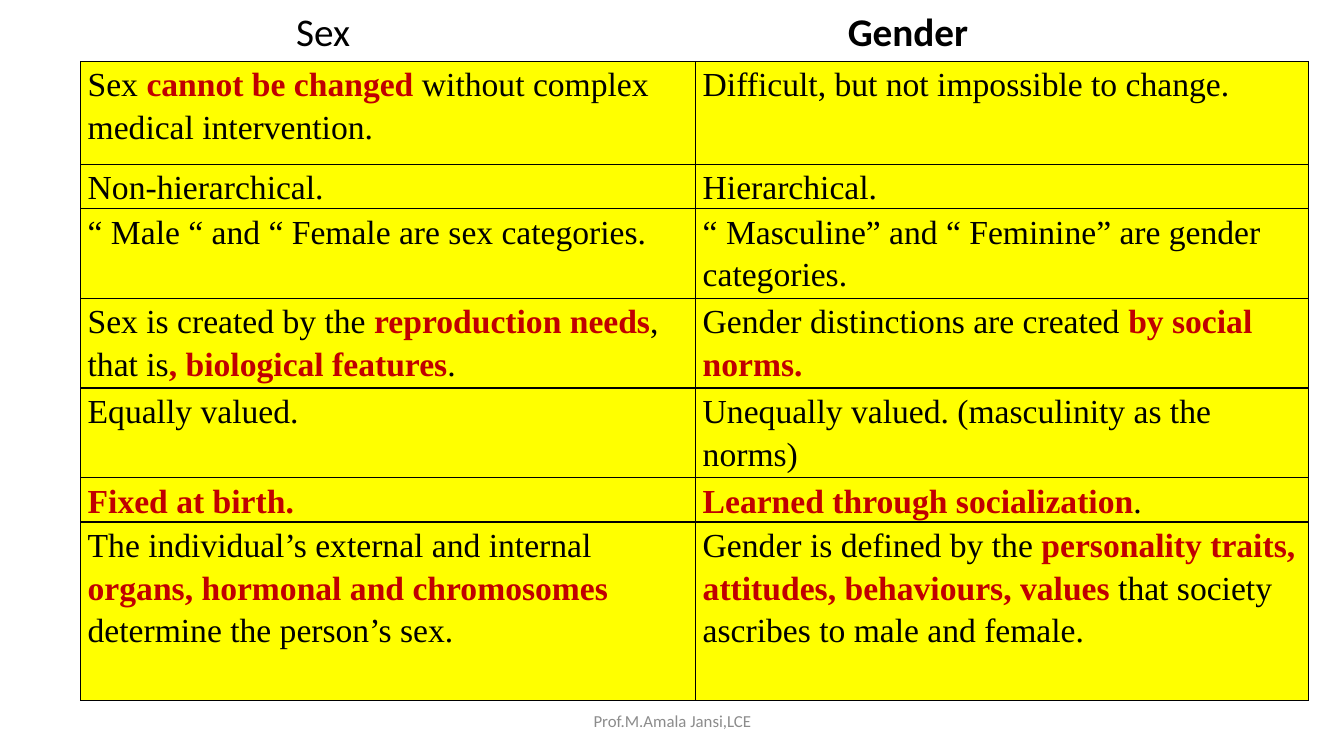
from lxml.etree import SubElement
from pptx import Presentation
from pptx.dml.color import RGBColor
from pptx.enum.text import MSO_ANCHOR, PP_ALIGN
from pptx.oxml.ns import qn
from pptx.util import Inches, Pt

# Words between asterisks are bold red.
ROWS = [
    (1.02, "Sex *cannot be changed *without complex medical intervention.",
     "Difficult, but not impossible to change."),
    (0.44, "Non-hierarchical.", "Hierarchical."),
    (0.89, "“ Male “ and “ Female are sex categories.",
     "“ Masculine” and “ Feminine” are gender categories."),
    (0.89, "Sex is created by the *reproduction needs*, that is*, biological features*.",
     "Gender distinctions are created *by social norms.*"),
    (0.89, "Equally valued.", "Unequally valued. (masculinity as the norms)"),
    (0.44, "*Fixed at birth.*", "*Learned through socialization*."),
    (1.77, "The individual’s external and internal *organs, hormonal and "
     "chromosomes *determine the person’s sex.",
     "Gender is defined by the *personality traits, attitudes, behaviours, "
     "values *that society ascribes to male and female."),
]
WIDTHS = [6.1, 6.08]


def color(code):
    return RGBColor.from_string(code)


class Deck:
    ink, key, fill, gray = "000000", "C00000", "FFFF00", "8C8C8C"
    head, body = "Calibri", "Times New Roman"

    def __init__(self):
        self.prs = Presentation()
        self.prs.slide_width = Inches(13.33)
        self.prs.slide_height = Inches(7.5)
        self.slide = self.prs.slides.add_slide(self.prs.slide_layouts[6])

    def style(self, font, name, size, code, bold=False):
        font.name, font.size, font.bold = name, Pt(size), bold
        font.color.rgb = color(code)

    def label(self, text, box, size, code, bold=False, align=PP_ALIGN.LEFT,
              anchor=MSO_ANCHOR.TOP):
        frame = self.slide.shapes.add_textbox(*map(Inches, box)).text_frame
        frame.word_wrap = True
        frame.vertical_anchor = anchor
        frame.text = text
        para = frame.paragraphs[0]
        para.alignment = align
        self.style(para.runs[0].font, self.head, size, code, bold)

    def border(self, cell):
        props = cell._tc.get_or_add_tcPr()
        for side in ("a:lnL", "a:lnR", "a:lnT", "a:lnB"):
            line = SubElement(props, qn(side), w=str(Pt(1)))
            paint = SubElement(line, qn("a:solidFill"))
            SubElement(paint, qn("a:srgbClr"), val=self.ink)

    def cell(self, cell, text):
        self.border(cell)
        cell.fill.solid()
        cell.fill.fore_color.rgb = color(self.fill)
        cell.margin_left = cell.margin_right = Inches(0.07)
        cell.margin_top = cell.margin_bottom = 0
        para = cell.text_frame.paragraphs[0]
        para.line_spacing = 1.15
        for i, part in enumerate(text.split("*")):
            if part:
                run = para.add_run()
                run.text = part
                strong = i % 2 == 1
                self.style(run.font, self.body, 24,
                           self.key if strong else self.ink, strong)

    def table(self, left, top, widths, rows):
        high = sum(row[0] for row in rows)
        table = self.slide.shapes.add_table(
            len(rows), len(widths), Inches(left), Inches(top),
            Inches(sum(widths)), Inches(high)).table
        table.first_row = table.horz_banding = False
        for col, width in zip(table.columns, widths):
            col.width = Inches(width)
        for row, (height, *texts) in zip(table.rows, rows):
            row.height = Inches(height)
            for cell, text in zip(row.cells, texts):
                self.cell(cell, text)


def main():
    deck = Deck()
    deck.table(0.8, 0.61, WIDTHS, ROWS)
    deck.label("Prof.M.Amala Jansi,LCE", (4.42, 6.95, 4.5, 0.4), 12, deck.gray,
               align=PP_ALIGN.CENTER, anchor=MSO_ANCHOR.MIDDLE)
    deck.label("Sex", (2.84, 0.02, 3.53, 0.57), 28, deck.ink)
    deck.label("Gender", (8.31, 0.02, 2.31, 0.57), 28, deck.ink, bold=True)
    deck.prs.save("out.pptx")


if __name__ == "__main__":
    main()
